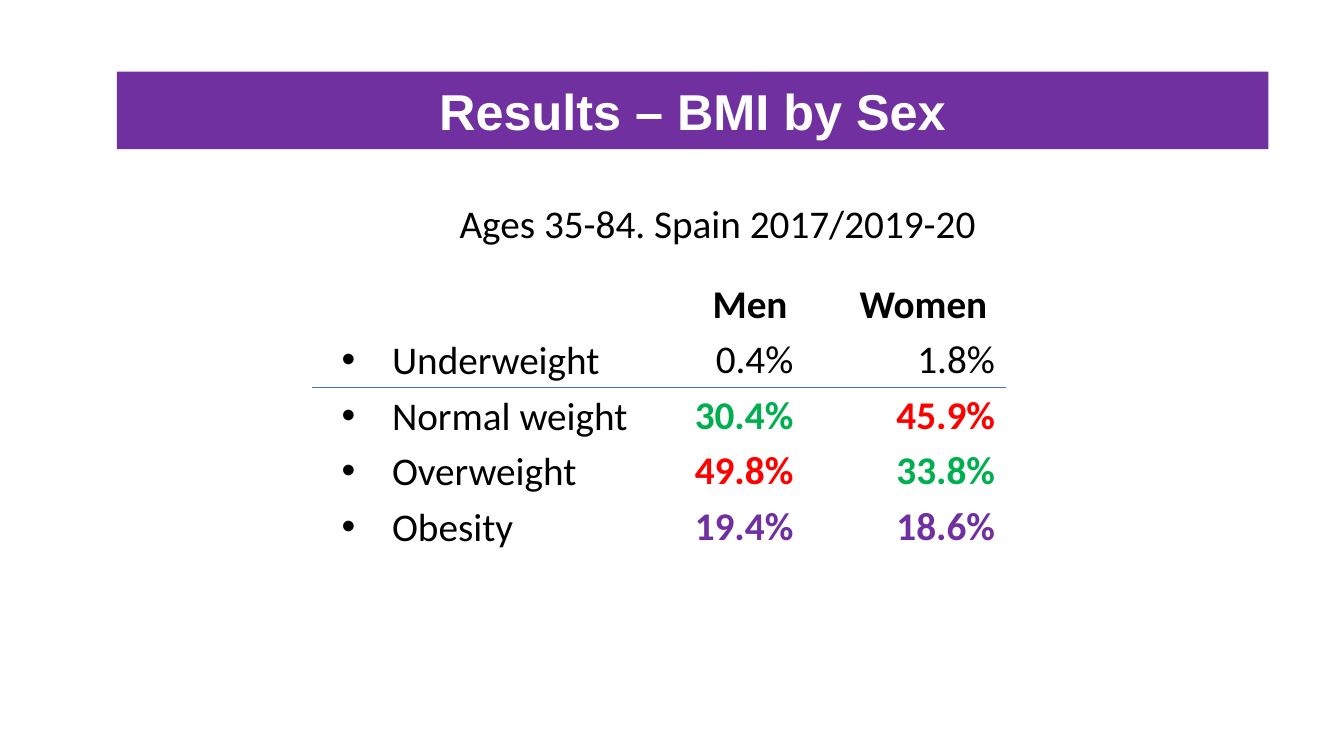
from lxml.etree import SubElement
from pptx import Presentation
from pptx.dml.color import RGBColor
from pptx.enum.shapes import MSO_CONNECTOR, MSO_SHAPE
from pptx.enum.text import MSO_ANCHOR, PP_ALIGN
from pptx.oxml.ns import qn
from pptx.util import Inches, Pt

TITLE = "Results – BMI by Sex"
SUBTITLE = "Ages 35-84. Spain 2017/2019-20"
SEXES = ("Men", "Women")
# category, then (value, colour, bold) for each sex
BMI_ROWS = [
    ("Underweight", ("0.4%", "black", False), ("1.8%", "black", False)),
    ("Normal weight", ("30.4%", "green", True), ("45.9%", "red", True)),
    ("Overweight", ("49.8%", "red", True), ("33.8%", "green", True)),
    ("Obesity", ("19.4%", "purple", True), ("18.6%", "purple", True)),
]
COLORS = {"black": "000000", "white": "FFFFFF", "purple": "7030A0",
          "green": "00B050", "red": "FF0000", "rule": "4472C4"}

ROW = 0.56
TABLE_TOP = 2.72
LABEL_LEFT, FIGURE_LEFT, COLUMN_WIDTH = 3.29, 6.79, 3.51
RULE_LEFT, RULE_RIGHT = 3.09, 9.98
HEADER_TABS = [(0.55, "ctr"), (2.27, "ctr")]
FIGURE_TABS = [(0.98, "r"), (2.98, "r")]


def add_run(paragraph, text, color="black", bold=False, size=28, font="Calibri"):
    run = paragraph.add_run()
    run.text = text
    run.font.name, run.font.size, run.font.bold = font, Pt(size), bold
    run.font.color.rgb = RGBColor.from_string(COLORS[color])


def add_text_frame(slide, left, top, width, height, wrap=True):
    box = slide.shapes.add_textbox(*map(Inches, (left, top, width, height)))
    box.text_frame.word_wrap = wrap
    return box.text_frame


def next_row(frame, index):
    paragraph = frame.add_paragraph() if index else frame.paragraphs[0]
    paragraph.alignment = PP_ALIGN.JUSTIFY
    paragraph.space_after = Pt(6)
    return paragraph


def set_bullet(paragraph):
    properties = paragraph._p.get_or_add_pPr()
    properties.set("marL", str(Inches(0.5)))
    properties.set("indent", str(-Inches(0.5)))
    SubElement(properties, qn("a:buFont"), typeface="Arial")
    SubElement(properties, qn("a:buChar"), char="•")


def set_tabs(paragraph, tabs):
    tab_list = SubElement(paragraph._p.get_or_add_pPr(), qn("a:tabLst"))
    for position, alignment in tabs:
        SubElement(tab_list, qn("a:tab"), pos=str(Inches(position)), algn=alignment)


def add_title(slide):
    banner = slide.shapes.add_shape(
        MSO_SHAPE.RECTANGLE, *map(Inches, (1.16, 0.71, 11.42, 0.77)))
    banner.shadow.inherit = False
    banner.fill.solid()
    banner.fill.fore_color.rgb = RGBColor.from_string(COLORS["purple"])
    banner.line.fill.background()
    frame = banner.text_frame
    frame.word_wrap = True
    frame.vertical_anchor = MSO_ANCHOR.MIDDLE
    frame.margin_left = frame.margin_right = Inches(0.16)
    frame.margin_top = frame.margin_bottom = Inches(0.08)
    frame.paragraphs[0].alignment = PP_ALIGN.CENTER
    add_run(frame.paragraphs[0], TITLE, "white", True, 36, "Arial")


def add_bmi_rows(slide):
    categories = add_text_frame(slide, LABEL_LEFT, TABLE_TOP + ROW,
                                COLUMN_WIDTH, len(BMI_ROWS) * ROW)
    figures = add_text_frame(slide, FIGURE_LEFT, TABLE_TOP,
                             COLUMN_WIDTH, (len(BMI_ROWS) + 1) * ROW)
    header = next_row(figures, 0)
    set_tabs(header, HEADER_TABS)
    for sex in SEXES:
        add_run(header, "\t" + sex, bold=True)
    for index, (category, *values) in enumerate(BMI_ROWS):
        label = next_row(categories, index)
        set_bullet(label)
        add_run(label, category)
        figure_row = next_row(figures, index + 1)
        set_tabs(figure_row, FIGURE_TABS)
        for value, color, bold in values:
            add_run(figure_row, "\t" + value, color, bold)


def add_rule(slide):
    y = TABLE_TOP + 2 * ROW
    rule = slide.shapes.add_connector(
        MSO_CONNECTOR.STRAIGHT, *map(Inches, (RULE_LEFT, y, RULE_RIGHT, y)))
    rule.line.color.rgb = RGBColor.from_string(COLORS["rule"])
    rule.line.width = Pt(0.5)
    SubElement(rule._element.spPr, qn("a:effectLst"))


def main():
    deck = Presentation()
    deck.slide_width, deck.slide_height = Inches(13.33), Inches(7.5)
    slide = deck.slides.add_slide(deck.slide_layouts[6])
    add_title(slide)
    subtitle = add_text_frame(slide, 4.46, 1.93, 5.39, 0.57, wrap=False)
    add_run(subtitle.paragraphs[0], SUBTITLE)
    add_bmi_rows(slide)
    add_rule(slide)
    deck.save("out.pptx")


if __name__ == "__main__":
    main()
